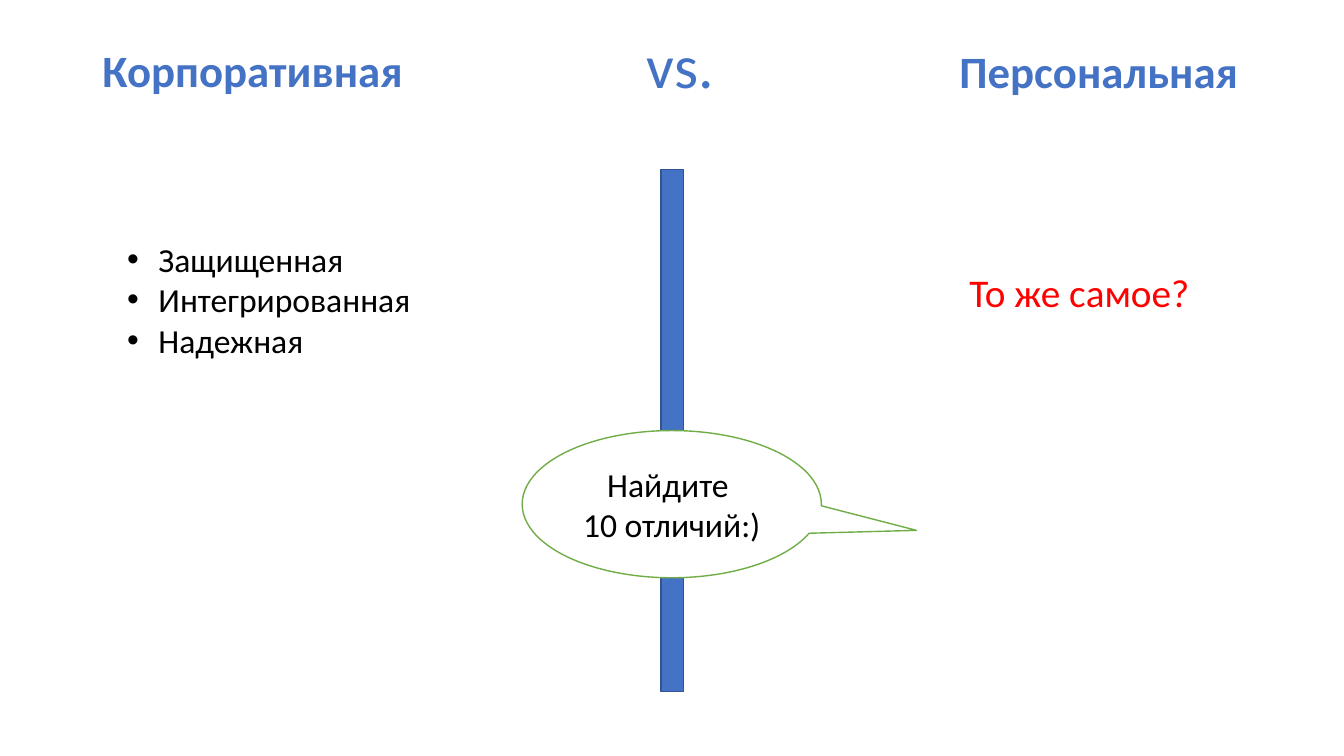
from lxml.etree import SubElement
from pptx import Presentation
from pptx.dml.color import RGBColor as RGB
from pptx.enum.shapes import MSO_SHAPE as SHAPE
from pptx.enum.text import MSO_ANCHOR as ANCHOR, MSO_AUTO_SIZE as AUTO, PP_ALIGN as ALIGN
from pptx.oxml.ns import qn
from pptx.util import Cm, Pt

FONT = "Calibri"
COLORS = {
    "blue": "4472C4",
    "dark_blue": "325491",
    "green": "70AD47",
    "red": "FF0000",
    "black": "000000",
    "white": "FFFFFF",
}


def color(name):
    return RGB.from_string(COLORS[name])


def place(sp, left, top, width, height):
    sp.left, sp.top, sp.width, sp.height = Cm(left), Cm(top), Cm(width), Cm(height)


def prepare_frame(sp, wrap=False, anchor=ANCHOR.TOP):
    tf = sp.text_frame
    tf.auto_size = AUTO.NONE
    tf.word_wrap = wrap
    tf.vertical_anchor = anchor
    return tf


def add_run(p, text, size, name, bold=False):
    r = p.add_run()
    r.text = text
    r.font.name, r.font.size, r.font.bold = FONT, Pt(size), bold
    r.font.color.rgb = color(name)


def write_line(sp, text, size, name, bold=False, align=ALIGN.LEFT):
    p = prepare_frame(sp).paragraphs[0]
    p.alignment = align
    add_run(p, text, size, name, bold)


def add_label(s, box, text, size, name, bold=False):
    sp = s.shapes.add_textbox(*map(Cm, box))
    write_line(sp, text, size, name, bold)


def add_figure(s, kind, box, fill, line):
    sp = s.shapes.add_shape(kind, *map(Cm, box))
    sp.shadow.inherit = False
    sp.fill.solid()
    sp.fill.fore_color.rgb = color(fill)
    sp.line.color.rgb = color(line)
    sp.line.width = Pt(1)
    return sp


def fill_bullets(sp, items):
    tf = prepare_frame(sp, wrap=True)
    for i, item in enumerate(items):
        p = tf.add_paragraph() if i else tf.paragraphs[0]
        p.space_before = p.space_after = Pt(0)
        p.line_spacing = 1.0
        pPr = p._p.get_or_add_pPr()
        pPr.set("marL", str(Cm(0.79)))
        pPr.set("indent", str(-Cm(0.79)))
        SubElement(pPr, qn("a:buFont"), typeface="Arial")
        SubElement(pPr, qn("a:buChar"), char="•")
        add_run(p, item, 24, "black")


def add_callout(s, box, lines):
    sp = add_figure(s, SHAPE.OVAL_CALLOUT, box, "white", "green")
    sp.adjustments[0], sp.adjustments[1] = 0.818, 0.178
    p = prepare_frame(sp, wrap=True, anchor=ANCHOR.MIDDLE).paragraphs[0]
    p.alignment = ALIGN.CENTER
    for i, line in enumerate(lines):
        if i:
            p.add_line_break()
        add_run(p, line, 24, "black")


def main():
    prs = Presentation()
    prs.slide_width, prs.slide_height = Cm(33.87), Cm(19.05)
    s = prs.slides.add_slide(prs.slide_layouts[1])
    title, body = s.placeholders

    # Divider between the two sides
    add_figure(s, SHAPE.RECTANGLE, (16.66, 4.27, 0.56, 13.16), "blue", "dark_blue")

    # Headings
    place(title, 2.26, 0.94, 8.15, 1.63)
    write_line(title, "Корпоративная", 32, "blue", bold=True, align=ALIGN.RIGHT)
    add_label(s, (16.05, 0.56, 2.24, 2.13), "vs.", 44, "blue")
    add_label(s, (23.93, 0.97, 7.62, 1.63), "Персональная", 32, "blue", bold=True)

    # Corporate side
    place(body, 2.95, 5.89, 8.69, 4.37)
    fill_bullets(body, ["Защищенная", "Интегрированная", "Надежная"])

    # Personal side
    add_label(s, (24.18, 6.63, 6.12, 1.45), "То же самое?", 28, "red")

    # Speech bubble over the divider
    add_callout(s, (13.16, 10.85, 7.54, 3.71), ["Найдите ", "10 отличий:)"])

    prs.save("out.pptx")


if __name__ == "__main__":
    main()
